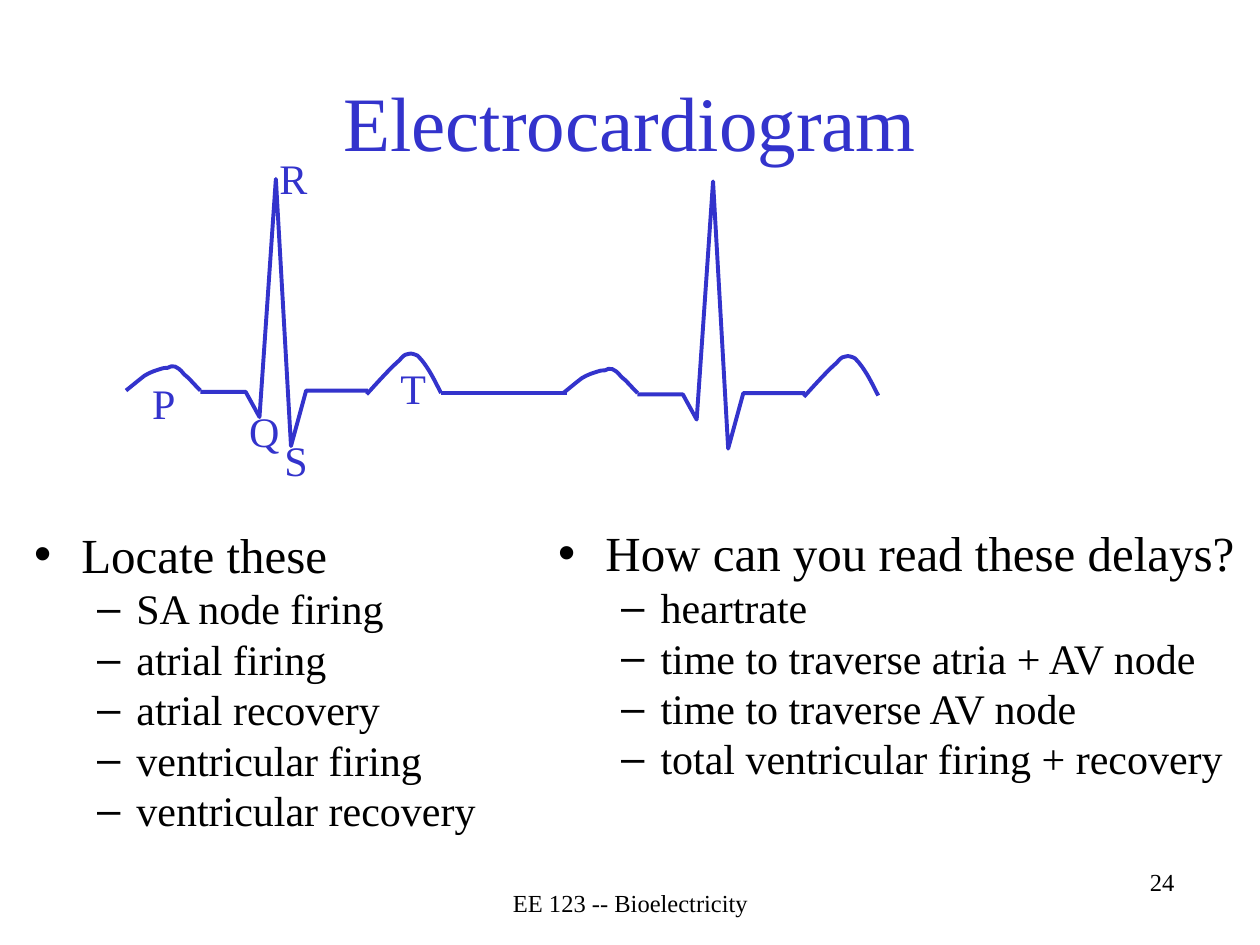
import pptx
import pptx.dml.color
import pptx.enum.shapes
import pptx.enum.text
import pptx.oxml.ns
import pptx.util
from lxml import etree

Inches, Pt = pptx.util.Inches, pptx.util.Pt
ALIGN = pptx.enum.text.PP_ALIGN
BLUE = pptx.dml.color.RGBColor(0x33, 0x33, 0xCC)
BLACK = pptx.dml.color.RGBColor(0, 0, 0)
FONT = "Times New Roman"
TRACE_WIDTH = Pt(2.25)

# Content
HEADING = "Electrocardiogram"
QUESTIONS = [
    ((0.17, 4.11, 4.83, 2.79), "Locate these",
     ["SA node firing", "atrial firing", "atrial recovery",
      "ventricular firing", "ventricular recovery"]),
    ((4.33, 4.1, 5.58, 2.79), "How can you read these delays?",
     ["heartrate", "time to traverse atria + AV node",
      "time to traverse AV node", "total ventricular firing + recovery"]),
]
WAVE_LABELS = {"P": (1.11, 2.95), "Q": (1.88, 3.17), "R": (2.12, 1.16),
               "S": (2.16, 3.4), "T": (3.08, 2.83)}
FOOTERS = [("24", (6.25, 6.83, 3.17, 0.5), ALIGN.RIGHT),
           ("EE 123 -- Bioelectricity", (3.42, 7, 3.17, 0.33), ALIGN.CENTER)]

# One heartbeat in inches; curves list a start, then three points per Bezier
P_WAVE = [(1, 3.1), (1.05, 3.06), (1.11, 3.01), (1.15, 2.98),
          (1.2, 2.95), (1.24, 2.94), (1.27, 2.93),
          (1.3, 2.92), (1.31, 2.92), (1.33, 2.92),
          (1.35, 2.91), (1.37, 2.9), (1.39, 2.91),
          (1.41, 2.92), (1.43, 2.93), (1.46, 2.97),
          (1.5, 3), (1.54, 3.05), (1.59, 3.1)]
T_WAVE = [(2.91, 3.13), (3.01, 3.02), (3.11, 2.91), (3.17, 2.86),
          (3.22, 2.8), (3.22, 2.82), (3.24, 2.81),
          (3.26, 2.8), (3.26, 2.81), (3.28, 2.81),
          (3.29, 2.82), (3.31, 2.81), (3.33, 2.84),
          (3.35, 2.86), (3.38, 2.9), (3.41, 2.95),
          (3.44, 3), (3.47, 3.06), (3.5, 3.12)]
QRS_COMPLEX = [(1.59, 3.11), (1.95, 3.11), (2.06, 3.31), (2.19, 1.42),
               (2.31, 3.54), (2.43, 3.1), (2.92, 3.1)]
BEAT_PARTS = [(P_WAVE, True), (T_WAVE, True), (QRS_COMPLEX, False)]
BEAT_OFFSETS = [(0, 0), (3.47, 0.02)]
BASELINE = (3.5, 3.12, 4.5, 3.12)


def style(paragraph, size, color, align=None):
    paragraph.font.name = FONT
    paragraph.font.size = Pt(size)
    paragraph.font.color.rgb = color
    if align is not None:
        paragraph.alignment = align


def place(shape, box):
    shape.left, shape.top, shape.width, shape.height = map(Inches, box)


def add_label(slide, text, box, size, color, align=ALIGN.LEFT):
    frame = slide.shapes.add_textbox(*map(Inches, box)).text_frame
    frame.word_wrap = True
    frame.text = text
    style(frame.paragraphs[0], size, color, align)


def lines_to_beziers(trace):
    """Turn each run of three line points into one cubic Bezier."""
    qn = pptx.oxml.ns.qn
    outline = next(trace._element.iter(qn("a:path")))
    steps = outline.findall(qn("a:lnTo"))
    for i in range(0, len(steps), 3):
        bezier = etree.SubElement(outline, qn("a:cubicBezTo"))
        for step in steps[i:i + 3]:
            bezier.append(step[0])
            outline.remove(step)


def add_trace(group, points, curved):
    start, *rest = [(Inches(x), Inches(y)) for x, y in points]
    builder = group.shapes.build_freeform(*start)
    builder.add_line_segments(rest, close=False)
    trace = builder.convert_to_shape()
    if curved:
        lines_to_beziers(trace)
    trace.fill.background()
    trace.line.color.rgb = BLUE
    trace.line.width = TRACE_WIDTH
    trace.shadow.inherit = False


def main():
    prs = pptx.Presentation()
    prs.slide_width, prs.slide_height = Inches(10), Inches(7.5)
    slide = prs.slides.add_slide(prs.slide_layouts.get_by_name("Two Content"))
    title, *bodies = slide.placeholders

    # Title
    place(title, (0.75, 0.33, 8.5, 1.25))
    title.text_frame.text = HEADING
    style(title.text_frame.paragraphs[0], 44, BLUE, ALIGN.CENTER)

    # Question lists
    for body, (box, question, answers) in zip(bodies, QUESTIONS):
        place(body, box)
        frame = body.text_frame
        frame.auto_size = pptx.enum.text.MSO_AUTO_SIZE.NONE
        frame.margin_right = 0
        frame.text = question
        style(frame.paragraphs[0], 28, BLACK)
        for answer in answers:
            item = frame.add_paragraph()
            item.text = answer
            item.level = 1
            item.space_before = Pt(0)
            style(item, 24, BLACK)

    # Heartbeats
    for dx, dy in BEAT_OFFSETS:
        beat = slide.shapes.add_group_shape()
        for points, curved in BEAT_PARTS:
            add_trace(beat, [(x + dx, y + dy) for x, y in points], curved)

    # Resting line between the beats
    rest = slide.shapes.add_connector(
        pptx.enum.shapes.MSO_CONNECTOR.STRAIGHT, *map(Inches, BASELINE))
    rest.line.color.rgb = BLUE
    rest.line.width = TRACE_WIDTH
    etree.SubElement(rest._element.spPr, pptx.oxml.ns.qn("a:effectLst"))

    # Wave labels, page number and footer
    for letter, corner in WAVE_LABELS.items():
        add_label(slide, letter, (*corner, 0.33, 0.5), 24, BLUE)
    for text, box, align in FOOTERS:
        add_label(slide, text, box, 14, BLACK, align)

    prs.save("out.pptx")


if __name__ == "__main__":
    main()
